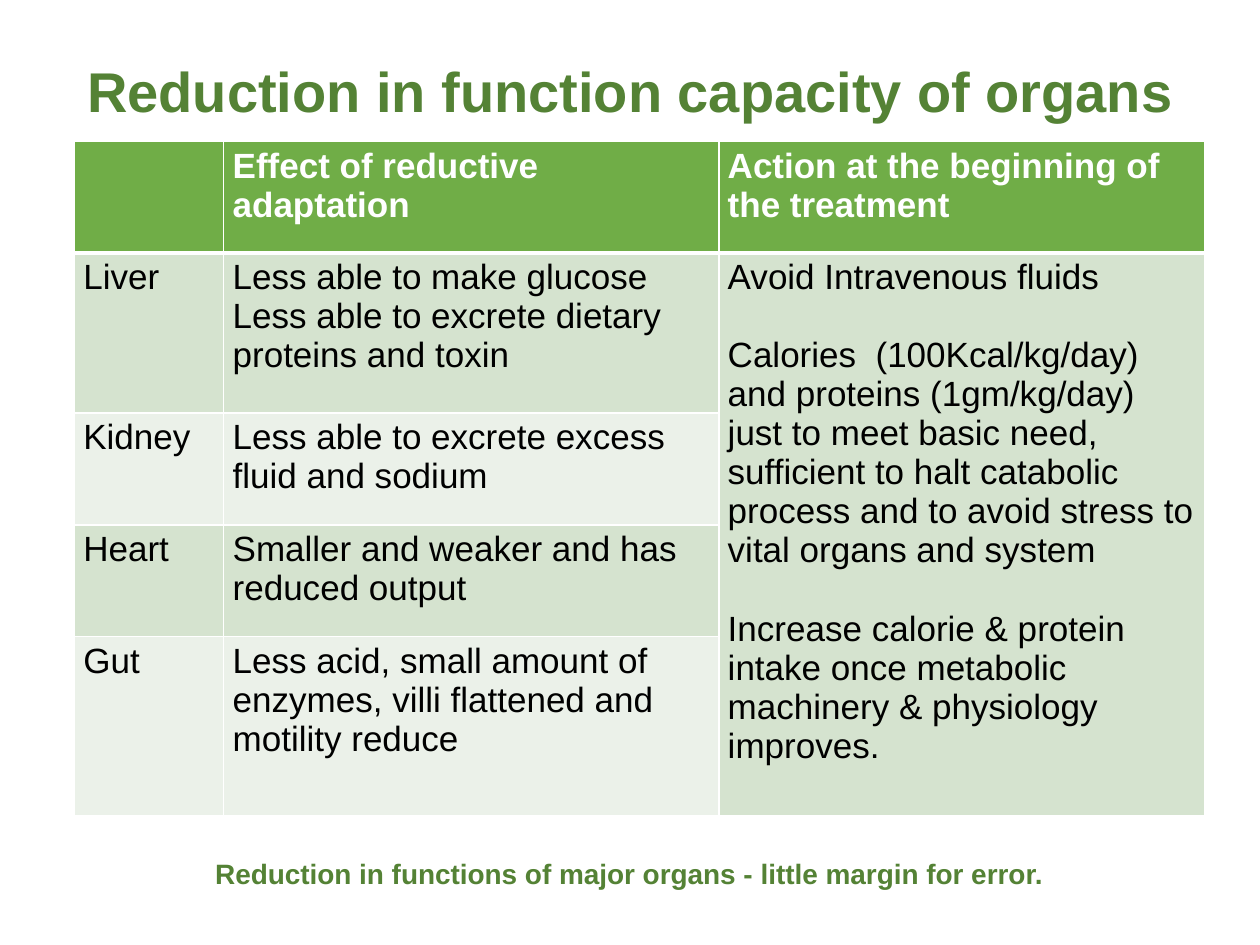
"""Build the slide on the reduced function capacity of organs."""
from lxml.etree import SubElement
from pptx import Presentation
from pptx.dml.color import RGBColor
from pptx.enum.text import MSO_ANCHOR, MSO_AUTO_SIZE, PP_ALIGN
from pptx.oxml.ns import qn
from pptx.util import Cm, Pt

COLORS = {"title": "548235", "header": "70AD47", "odd": "D5E3CF",
          "even": "EBF1E9", "white": "FFFFFF", "text": "000000"}
COL_WIDTHS = [3.01, 9.98, 9.8]
ROW_HEIGHTS = [2.25, 3.23, 2.25, 2.25, 3.61]
ROWS = [
    ["", "Effect of reductive adaptation", "Action at the beginning of the treatment"],
    ["Liver", "Less able to make glucose\nLess able to excrete dietary proteins and toxin",
     "Avoid Intravenous fluids\n"
     "Calories  (100Kcal/kg/day) and proteins (1gm/kg/day) just to meet basic need, "
     "sufficient to halt catabolic process and to avoid stress to vital organs and system\n"
     "Increase calorie & protein intake once metabolic machinery & physiology improves."],
    ["Kidney", "Less able to excrete excess fluid and sodium", ""],
    ["Heart", "Smaller and weaker and has reduced output", ""],
    ["Gut", "Less acid, small amount of enzymes, villi flattened and motility reduce", ""],
]


def rgb(name):
    return RGBColor.from_string(COLORS[name])


def set_font(p, size, color, bold=False):
    p.font.name = "Arial"
    p.font.size = Pt(size)
    p.font.bold = bold
    p.font.color.rgb = rgb(color)


def fill_heading(tf, text, size):
    tf.word_wrap = True
    tf.text = text
    p = tf.paragraphs[0]
    p.alignment = PP_ALIGN.CENTER
    set_font(p, size, "title", True)
    return p


def add_title(s, text):
    sp = s.shapes.title
    sp.left, sp.top, sp.width, sp.height = Cm(1.5), Cm(0.96), Cm(22.43), Cm(1.9)
    tf = sp.text_frame
    tf.auto_size = MSO_AUTO_SIZE.NONE
    tf.vertical_anchor = MSO_ANCHOR.MIDDLE
    fill_heading(tf, text, 32).line_spacing = 0.9


def add_footer(s, text):
    sp = s.shapes.add_textbox(Cm(1.78), Cm(17.15), Cm(21.82), Cm(0.94))
    fill_heading(sp.text_frame, text, 16)


def set_borders(cell, **widths):
    tc_pr = cell._tc.get_or_add_tcPr()
    for side in "LRTB":
        ln = SubElement(tc_pr, qn(f"a:ln{side}"), w=str(Pt(widths.get(side, 1))))
        fill = SubElement(ln, qn("a:solidFill"))
        SubElement(fill, qn("a:srgbClr"), val=COLORS["white"])


def format_cell(cell, text, row):
    cell.margin_left = cell.margin_right = Cm(0.18)
    cell.margin_top = cell.margin_bottom = Cm(0.1)
    set_borders(cell, T=3 if row == 1 else 1, B=3 if row == 0 else 1)
    cell.fill.solid()
    cell.fill.fore_color.rgb = rgb("header" if row == 0 else "odd" if row % 2 else "even")
    cell.text = text
    for p in cell.text_frame.paragraphs:
        set_font(p, 20, "text" if row else "white", row == 0)


def add_organ_table(s):
    table = s.shapes.add_table(len(ROWS), len(COL_WIDTHS), Cm(1.5), Cm(2.85),
                               Cm(sum(COL_WIDTHS)), Cm(sum(ROW_HEIGHTS))).table
    for column, width in zip(table.columns, COL_WIDTHS):
        column.width = Cm(width)
    for row, height in zip(table.rows, ROW_HEIGHTS):
        row.height = Cm(height)
    for r, texts in enumerate(ROWS):
        for c, text in enumerate(texts):
            format_cell(table.cell(r, c), text, r)
    action = table.cell(1, 2)
    action.merge(table.cell(len(ROWS) - 1, 2))
    for p in action.text_frame.paragraphs[1:]:
        p.space_before = Pt(22.3)


def main():
    prs = Presentation()
    prs.slide_width, prs.slide_height = Cm(25.4), Cm(19.05)
    s = prs.slides.add_slide(prs.slide_layouts[5])
    add_title(s, "Reduction in function capacity of organs")
    add_organ_table(s)
    add_footer(s, "Reduction in functions of major organs - little margin for error.")
    prs.save("out.pptx")


if __name__ == "__main__":
    main()
